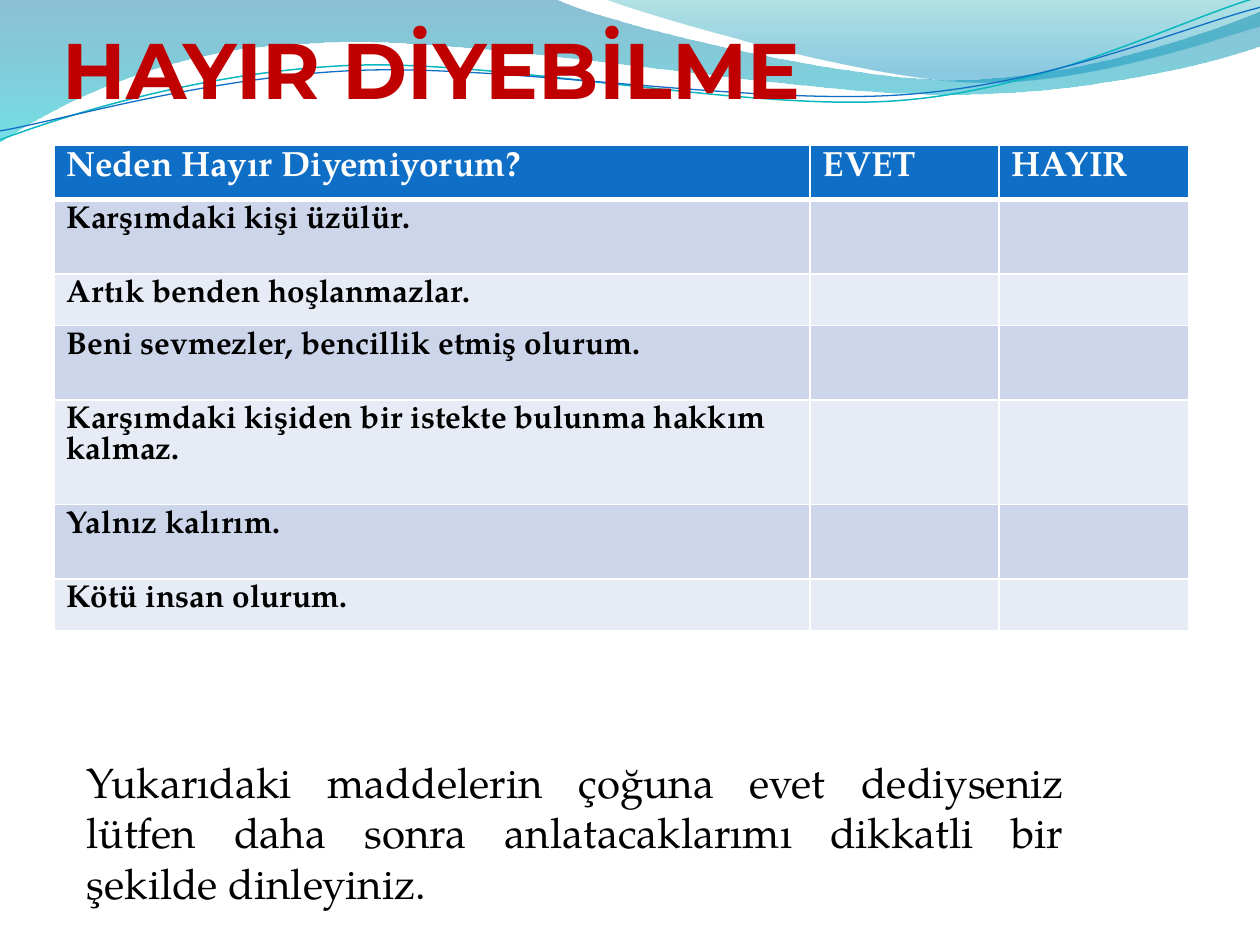
from dataclasses import dataclass

import lxml.etree
import pptx
import pptx.dml.color
import pptx.enum.text
import pptx.oxml.ns
import pptx.util
from pptx.util import Cm, Pt


@dataclass(frozen=True)
class Theme:
    title_font: str = "Montserrat"
    body_font: str = "TeX Gyre Pagella"
    title_size: float = 45
    header_size: float = 20
    row_size: float = 18
    note_size: float = 24
    title: str = "C00000"
    text: str = "000000"
    white: str = "FFFFFF"
    header: str = "0F6FC6"
    bands: tuple = ("CCD5EA", "E7EBF5")
    teal: str = "0AB8BF"
    # Each gradient stop: position, colour, opacity in percent
    left_wave: tuple = ((0, "0074A1", 45), (1, "00C6CF", 55))
    right_wave: tuple = ((0, "00A1A9", 30), (0.8, "008BBF", 45))


THEME = Theme()

# Outlines in cm: a start point, then line ends (x, y) or curves (two controls and an end)
LEFT_WAVE = [
    (0, 0), (11.18, -0.03),
    (12.09, 0.43, 16.87, 1.6, 19.25, 1.6), (21.67, 1.6, 24.33, 0.66, 25.4, 0.23),
    (25.43, 0.91),
    (24.97, 1.12, 22.1, 1.93, 18.95, 1.9), (15.8, 1.9, 9.7, 0.71, 6.53, 0.86),
    (3.28, 0.91, 1.17, 2.11, -0.03, 2.87), (0, 0),
]
RIGHT_WAVE = [
    (12.17, -0.03),
    (12.93, 0.28, 17.32, 1.57, 19.53, 1.65), (21.74, 1.75, 24.41, 0.81, 25.4, 0.53),
    (25.4, 0), (12.17, -0.03),
]
TEAL_LINE = [
    (0, 2.82),
    (1.22, 2.36, 4.01, 1.45, 7.04, 1.32), (10.03, 1.19, 15.06, 2.26, 18.11, 2.03),
    (21.16, 1.8, 23.83, 0.38, 25.35, -0.05),
]
BLUE_LINE = [
    (0, 2.64),
    (1.19, 2.44, 4.17, 1.55, 7.19, 1.42), (10.24, 1.3, 15.16, 2.13, 18.21, 1.91),
    (21.23, 1.7, 23.9, 0.53, 25.4, 0.15),
]

HEADERS = ["Neden Hayır Diyemiyorum?", "EVET", "HAYIR"]
COLUMN_WIDTHS = [15.24, 3.81, 3.83]
HEADER_HEIGHT = 1.04
REASONS = [
    ("Karşımdaki kişi üzülür.", 1.5),
    ("Artık benden hoşlanmazlar.", 1.04),
    ("Beni sevmezler, bencillik etmiş olurum.", 1.5),
    ("Karşımdaki kişiden bir istekte bulunma hakkım kalmaz.", 2.11),
    ("Yalnız kalırım.", 1.5),
    ("Kötü insan olurum.", 1.04),
]
NOTE = ("Yukarıdaki maddelerin çoğuna evet dediyseniz lütfen daha sonra "
        "anlatacaklarımı dikkatli bir şekilde dinleyiniz.")


def rgb(color):
    return pptx.dml.color.RGBColor.from_string(color)


def add_outline(slide, outline, close):
    """Draw all points as lines, then merge each curve's three lines into one Bézier."""
    points = [(Cm(segment[i]), Cm(segment[i + 1]))
              for segment in outline for i in range(0, len(segment), 2)]
    builder = slide.shapes.build_freeform(*points[0])
    builder.add_line_segments(points[1:], close=close)
    shape = builder.convert_to_shape()
    shape.shadow.inherit = False
    lines = iter(list(shape.element.iter(pptx.oxml.ns.qn("a:lnTo"))))
    for segment in outline[1:]:
        parts = [next(lines) for _ in range(len(segment) // 2)]
        if len(parts) == 3:
            curve = lxml.etree.Element(pptx.oxml.ns.qn("a:cubicBezTo"))
            parts[0].addprevious(curve)
            for part in parts:
                curve.append(part[0])
                part.getparent().remove(part)
    return shape


def add_wave(slide, outline, stops):
    shape = add_outline(slide, outline, close=True)
    shape.line.fill.background()
    shape.fill.gradient()
    shape.fill.gradient_angle = 270
    for stop, (position, color, _) in zip(shape.fill.gradient_stops, stops):
        stop.position = position
        stop.color.rgb = rgb(color)
    tag = pptx.oxml.ns.qn("a:srgbClr")
    for element, (_, _, opacity) in zip(shape.element.spPr.iter(tag), stops):
        alpha = lxml.etree.SubElement(element, pptx.oxml.ns.qn("a:alpha"))
        alpha.set("val", str(opacity * 1000))


def add_wave_line(slide, outline, color, width):
    shape = add_outline(slide, outline, close=False)
    shape.fill.background()
    shape.line.color.rgb = rgb(color)
    shape.line.width = Pt(width)


def style_font(font, name, size, color, bold=False):
    font.name, font.size, font.bold = name, Pt(size), bold
    font.color.rgb = rgb(color)


def add_text(slide, text, left, top, width, height):
    """Add a wrapping text box; return its frame and its only paragraph."""
    box = slide.shapes.add_textbox(Cm(left), Cm(top), Cm(width), Cm(height))
    frame = box.text_frame
    frame.word_wrap = True
    frame.text = text
    return frame, frame.paragraphs[0]


def add_title(slide):
    frame, paragraph = add_text(slide, "HAYIR DİYEBİLME", 1.27, 0.78, 22.86, 1.55)
    frame.margin_left = frame.margin_right = frame.margin_bottom = 0
    frame.vertical_anchor = pptx.enum.text.MSO_ANCHOR.BOTTOM
    style_font(paragraph.runs[0].font, THEME.title_font, THEME.title_size, THEME.title, True)


def add_note(slide):
    paragraph = add_text(slide, NOTE, 1.5, 15.12, 20.19, 2.31)[1]
    paragraph.alignment = pptx.enum.text.PP_ALIGN.JUSTIFY
    style_font(paragraph.runs[0].font, THEME.body_font, THEME.note_size, THEME.text)


def set_borders(cell, bottom):
    properties = cell._tc.get_or_add_tcPr()
    for side, width in (("L", 1), ("R", 1), ("T", 1), ("B", bottom)):
        line = lxml.etree.SubElement(properties, pptx.oxml.ns.qn(f"a:ln{side}"))
        line.set("w", str(Pt(width)))
        fill = lxml.etree.SubElement(line, pptx.oxml.ns.qn("a:solidFill"))
        color = lxml.etree.SubElement(fill, pptx.oxml.ns.qn("a:srgbClr"))
        color.set("val", THEME.white)


def add_reason_table(slide):
    rows = [HEADERS] + [[reason, "", ""] for reason, _ in REASONS]
    heights = [HEADER_HEIGHT] + [height for _, height in REASONS]
    table = slide.shapes.add_table(len(rows), len(HEADERS), Cm(1.09), Cm(2.92),
                                   Cm(sum(COLUMN_WIDTHS)), Cm(sum(heights))).table
    for column, width in zip(table.columns, COLUMN_WIDTHS):
        column.width = Cm(width)
    for index, (row, texts, height) in enumerate(zip(table.rows, rows, heights)):
        row.height = Cm(height)
        is_header = index == 0
        fill = THEME.header if is_header else THEME.bands[(index - 1) % 2]
        size = THEME.header_size if is_header else THEME.row_size
        color = THEME.white if is_header else THEME.text
        for cell, text in zip(row.cells, texts):
            set_borders(cell, bottom=3 if is_header else 1)
            cell.fill.solid()
            cell.fill.fore_color.rgb = rgb(fill)
            cell.text_frame.text = text
            for run in cell.text_frame.paragraphs[0].runs:
                style_font(run.font, THEME.body_font, size, color, True)


def main():
    presentation = pptx.Presentation()
    presentation.slide_width, presentation.slide_height = Cm(25.4), Cm(19.05)
    slide = presentation.slides.add_slide(presentation.slide_layouts[6])
    add_wave(slide, LEFT_WAVE, THEME.left_wave)
    add_wave(slide, RIGHT_WAVE, THEME.right_wave)
    add_wave_line(slide, TEAL_LINE, THEME.teal, 0.85)
    add_wave_line(slide, BLUE_LINE, THEME.header, 0.75)
    add_title(slide)
    add_reason_table(slide)
    add_note(slide)
    presentation.save("out.pptx")


if __name__ == "__main__":
    main()
